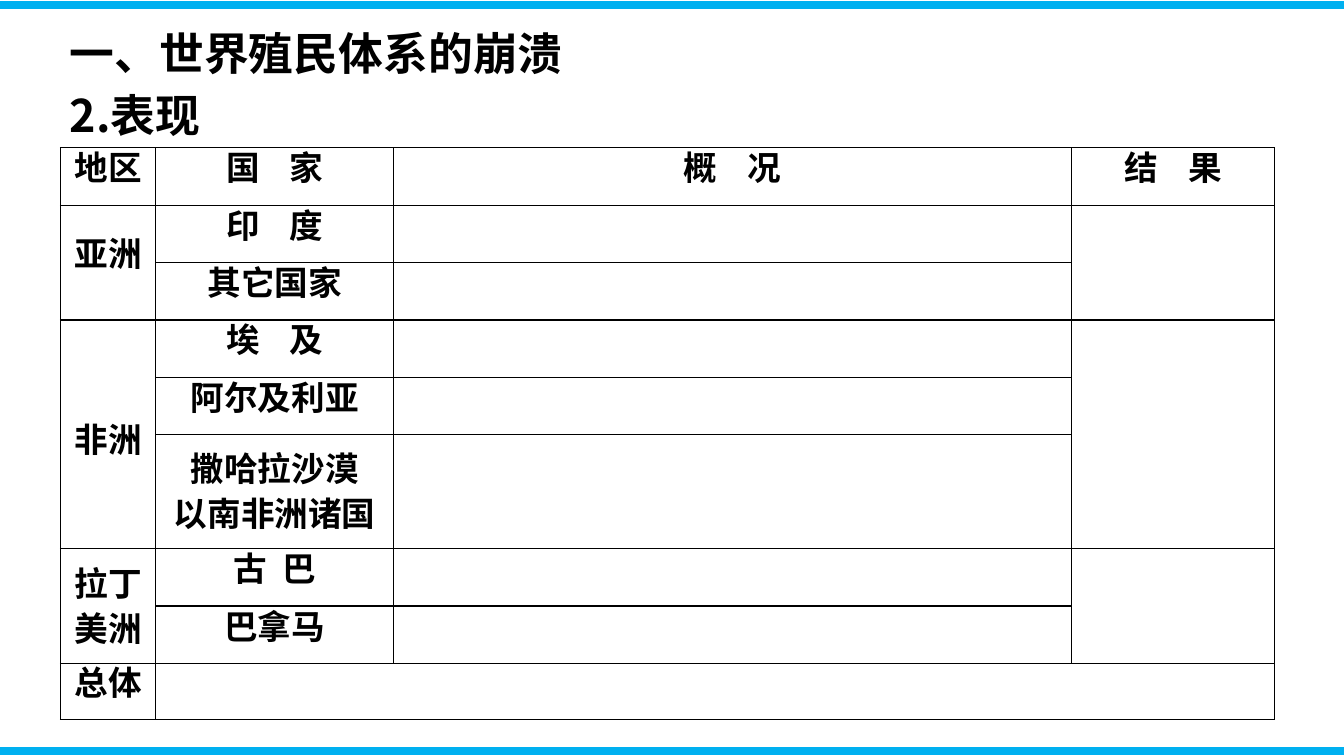
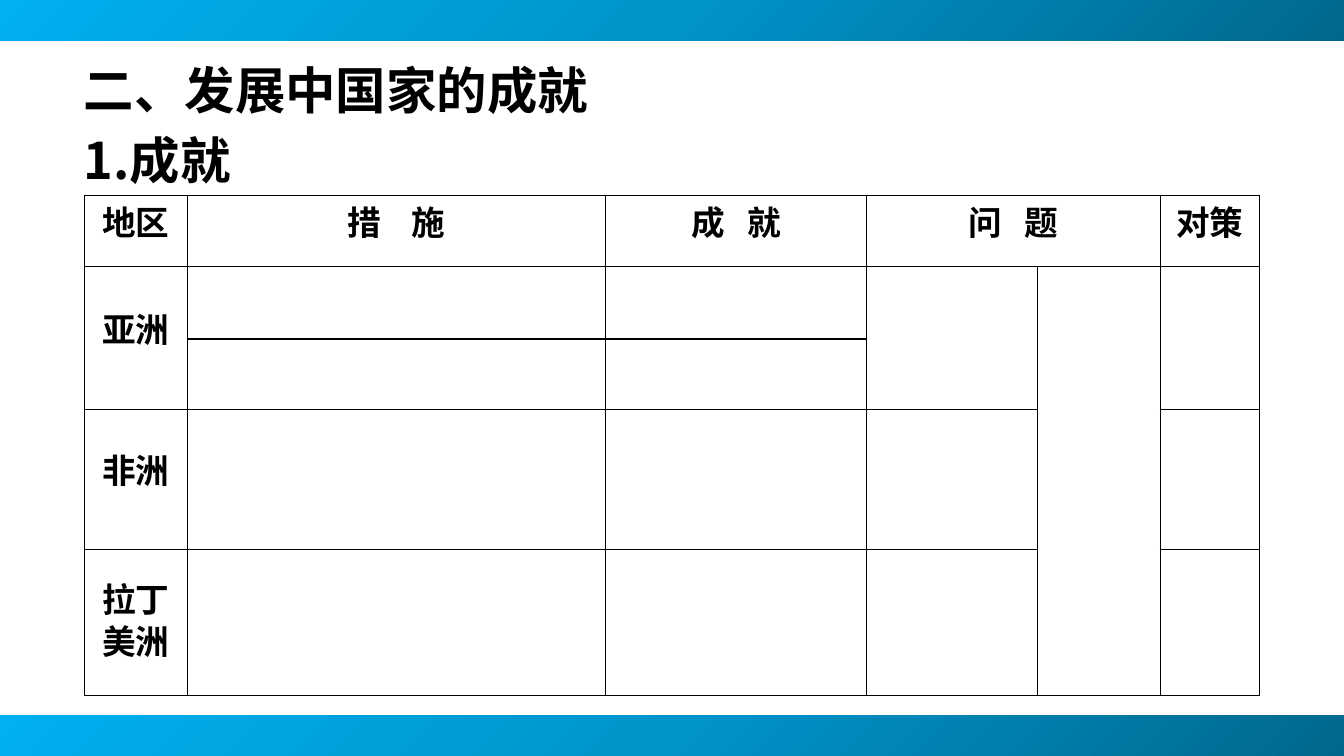
from lxml.etree import SubElement
from pptx import Presentation
from pptx.dml.color import RGBColor
from pptx.enum.shapes import MSO_CONNECTOR, MSO_SHAPE
from pptx.enum.text import MSO_ANCHOR as Anchor, MSO_AUTO_SIZE as AutoSize, PP_ALIGN as Align
from pptx.oxml import parse_xml
from pptx.oxml.ns import nsdecls, qn
from pptx.util import Pt

COLORS = {
    "text": "000000",
    "border": "000000",
    "accent": "00B0F0",
    "accent_mid": "0094CA",
    "accent_dark": "00688E",
}
FONT = "Noto Sans CJK SC"
WIDTH, HEIGHT = 960, 540


class Deck:
    def __init__(self):
        self.presentation = Presentation()
        self.presentation.slide_width = Pt(WIDTH)
        self.presentation.slide_height = Pt(HEIGHT)
        self.slide = None

    def add_slide(self):
        layout = self.presentation.slide_layouts[5]
        self.slide = self.presentation.slides.add_slide(layout)

    def style(self, paragraph, size, line_spacing, align):
        paragraph.alignment = align
        paragraph.line_spacing = Pt(line_spacing)
        font = paragraph.font
        font.size, font.bold, font.name = Pt(size), True, FONT
        font.color.rgb = RGBColor.from_string(COLORS["text"])
        properties = paragraph._p.get_or_add_pPr().get_or_add_defRPr()
        SubElement(properties, qn("a:ea")).set("typeface", FONT)

    def title(self, lines, left, top, width, height, size, line_spacing):
        title = self.slide.shapes.title
        title.left, title.top = Pt(left), Pt(top)
        title.width, title.height = Pt(width), Pt(height)
        frame = title.text_frame
        frame.text = "\n".join(lines)
        frame.word_wrap = True
        frame.auto_size = AutoSize.NONE
        frame.vertical_anchor = Anchor.TOP
        for paragraph in frame.paragraphs:
            self.style(paragraph, size, line_spacing, Align.LEFT)
            paragraph._p.get_or_add_pPr().set("indent", str(Pt(16)))

    def rule(self, y):
        line = self.slide.shapes.add_connector(
            MSO_CONNECTOR.STRAIGHT, Pt(0), Pt(y), Pt(WIDTH), Pt(y))
        line.line.color.rgb = RGBColor.from_string(COLORS["accent"])
        line.line.width = Pt(6)
        SubElement(line._element.spPr, qn("a:effectLst"))

    def gradient_bar(self, top, height):
        bar = self.slide.shapes.add_shape(
            MSO_SHAPE.RECTANGLE, Pt(0), Pt(top), Pt(WIDTH), Pt(height))
        bar.shadow.inherit = False
        bar.line.fill.background()
        stops = zip((0, 50000, 100000), ("accent_dark", "accent_mid", "accent"))
        stop_list = "".join(
            f'<a:gs pos="{position}"><a:srgbClr val="{COLORS[name]}"/></a:gs>'
            for position, name in stops)
        gradient = parse_xml(
            f'<a:gradFill {nsdecls("a")} rotWithShape="1"><a:gsLst>{stop_list}</a:gsLst>'
            '<a:path path="circle"><a:fillToRect l="100000" t="100000"/></a:path>'
            '</a:gradFill>')
        bar._element.spPr.find(qn("a:prstGeom")).addnext(gradient)

    def border(self, cell):
        properties = cell._tc.get_or_add_tcPr()
        for side in ("lnL", "lnR", "lnT", "lnB"):
            properties.append(parse_xml(
                f'<a:{side} {nsdecls("a")} w="{Pt(1)}"><a:solidFill>'
                f'<a:srgbClr val="{COLORS["border"]}"/></a:solidFill></a:{side}>'))

    def table(self, left, top, columns, rows, spans):
        """Add an empty bordered grid; spans lists (row, column, last row, last column)."""
        table = self.slide.shapes.add_table(
            len(rows), len(columns), Pt(left), Pt(top), Pt(sum(columns)), Pt(sum(rows))).table
        table.first_row = table.horz_banding = False
        for column, width in zip(table.columns, columns):
            column.width = Pt(width)
        for row, height in zip(table.rows, rows):
            row.height = Pt(height)
        for cell in table.iter_cells():
            self.border(cell)
            cell.fill.background()
            cell.vertical_anchor = Anchor.MIDDLE
            cell.margin_left = cell.margin_right = Pt(5)
            cell.margin_top = cell.margin_bottom = Pt(0)
        for row, column, last_row, last_column in spans:
            table.cell(row, column).merge(table.cell(last_row, last_column))
        return table

    def label(self, cell, text, line_spacing=20, gap=16):
        """Fill a cell; gap is the extra width in points of a space in the text."""
        frame = cell.text_frame
        for index, line in enumerate(text.split("\n")):
            paragraph = frame.add_paragraph() if index else frame.paragraphs[0]
            self.style(paragraph, 24, line_spacing, Align.CENTER)
            for part in filter(None, line.partition(" ")):
                run = paragraph.add_run()
                run.text = part
                if part == " ":
                    run._r.get_or_add_rPr().set("spc", str(int(gap * 100)))


def colonial_collapse(deck):
    deck.add_slide()
    deck.title(["一、世界殖民体系的崩溃", "2.表现"], 26.6, 9.4, 493, 91, 32, 44)
    table = deck.table(
        43.2, 105.6, [68, 170, 484, 145.5], [41] * 5 + [81.4, 41, 41, 40.3],
        [(1, 0, 2, 0), (1, 3, 2, 3), (3, 0, 5, 0), (3, 3, 5, 3),
         (6, 0, 7, 0), (6, 3, 7, 3), (8, 1, 8, 3)])
    for column, heading in enumerate(["地区", "国 家", "概 况", "结 果"]):
        deck.label(table.cell(0, column), heading)
    countries = ["印 度", "其它国家", "埃 及", "阿尔及利亚"]
    for row, country in enumerate(countries, 1):
        deck.label(table.cell(row, 1), country)
    deck.label(table.cell(5, 1), "撒哈拉沙漠\n以南非洲诸国", 32)
    deck.label(table.cell(6, 1), "古 巴", gap=5.5)
    deck.label(table.cell(7, 1), "巴拿马")
    deck.label(table.cell(1, 0), "亚洲")
    africa = table.cell(3, 0)
    africa.margin_top = Pt(20)
    deck.label(africa, "非洲")
    deck.label(table.cell(6, 0), "拉丁美洲", 32)
    deck.label(table.cell(8, 0), "总体")
    for y in (3.6, HEIGHT - 3.6):
        deck.rule(y)


def developing_countries(deck):
    deck.add_slide()
    deck.title(["二、发展中国家的成就", "1.成就"], 36.7, 31.7, 449, 108, 36, 50)
    table = deck.table(
        60.4, 139.6, [73.4, 298.8, 186.5, 121.8, 87.9, 70.7], [51, 51.5, 50.5, 100, 104.4],
        [(0, 3, 0, 4), (1, 0, 2, 0), (1, 3, 2, 3), (1, 4, 4, 4), (1, 5, 2, 5)])
    deck.label(table.cell(0, 0), "地区")
    deck.label(table.cell(0, 1), "措 施")
    deck.label(table.cell(0, 2), "成 就", gap=11)
    deck.label(table.cell(0, 3), "问 题", gap=11)
    deck.label(table.cell(0, 5), "对策")
    deck.label(table.cell(1, 0), "亚洲")
    deck.label(table.cell(3, 0), "非洲")
    deck.label(table.cell(4, 0), "拉丁美洲", 30)
    bar_height = 29
    for top in (0, HEIGHT - bar_height):
        deck.gradient_bar(top, bar_height)


def main():
    deck = Deck()
    colonial_collapse(deck)
    developing_countries(deck)
    deck.presentation.save("out.pptx")


if __name__ == "__main__":
    main()
